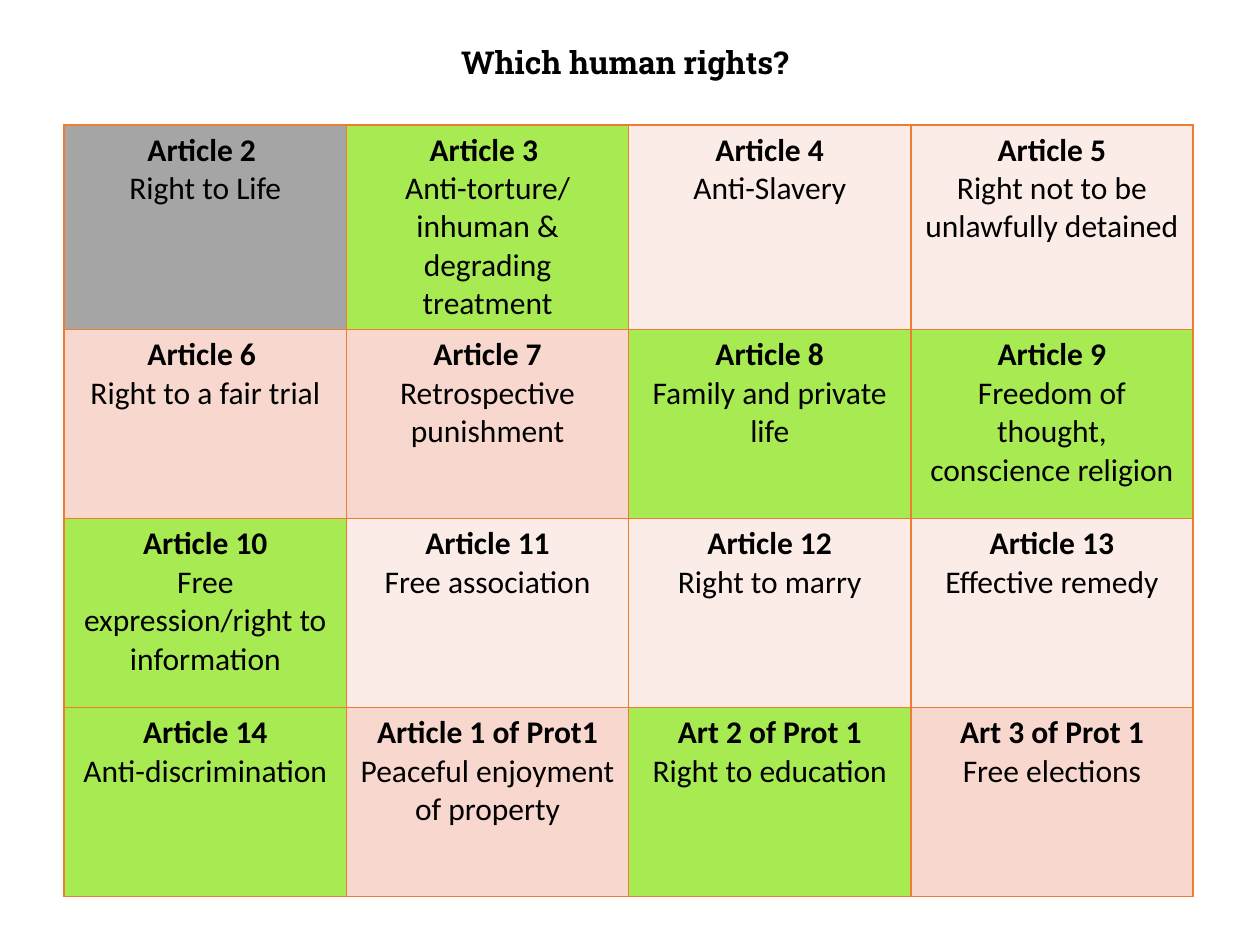
import pptx
import pptx.util
import pptx.dml.color
import pptx.enum.text
import lxml.etree
from pptx.oxml.ns import qn

TITLE = "Which human rights?"
# heading, right, colour of the cell
RIGHTS = [
    [("Article 2 ", "Right to Life", "grey"),
     ("Article 3 ", "Anti-torture/inhuman & degrading treatment", "green"),
     ("Article 4", "Anti-Slavery", "pale"),
     ("Article 5", "Right not to be unlawfully detained", "pale")],
    [("Article 6 ", "Right to a fair trial", "pink"),
     ("Article 7", "Retrospective punishment", "pink"),
     ("Article 8", "Family and private life", "green"),
     ("Article 9", "Freedom of thought, conscience religion", "green")],
    [("Article 10", "Free expression/right to information", "green"),
     ("Article 11", "Free association", "pale"),
     ("Article 12", "Right to marry", "pale"),
     ("Article 13", "Effective remedy", "pale")],
    [("Article 14", "Anti-discrimination", "green"),
     ("Article 1 of Prot1", "Peaceful enjoyment of property", "pink"),
     ("Art 2 of Prot 1", "Right to education", "green"),
     ("Art 3 of Prot 1", "Free elections", "pink")],
]
COLORS = {"text": "000000", "line": "ED7D31", "grey": "A5A5A5",
          "green": "A7EA52", "pale": "FCECE8", "pink": "F8D7CE"}
WIDE, HIGH = 10, 7.5
COL, ROW = 2.24, 1.5
LEFT, TOP = 0.51, 0.99

inch = pptx.util.Inches


def rgb(name):
    return pptx.dml.color.RGBColor.from_string(COLORS[name])


def write(para, text, font="Calibri", size=18, bold=False, color="text"):
    para.alignment = pptx.enum.text.PP_ALIGN.CENTER
    run = para.add_run()
    run.text = text
    run.font.name = font
    run.font.size = pptx.util.Pt(size)
    run.font.bold = bold
    run.font.color.rgb = rgb(color)


def border(cell, color="line", width=1):
    props = cell._tc.get_or_add_tcPr()
    for spot, side in enumerate(("lnL", "lnR", "lnT", "lnB")):
        line = lxml.etree.Element(qn("a:" + side), w=str(pptx.util.Pt(width)))
        fill = lxml.etree.SubElement(line, qn("a:solidFill"))
        lxml.etree.SubElement(fill, qn("a:srgbClr"), val=COLORS[color])
        props.insert(spot, line)


def main():
    deck = pptx.Presentation()
    deck.slide_width, deck.slide_height = inch(WIDE), inch(HIGH)
    slide = deck.slides.add_slide(deck.slide_layouts[6])

    rows, cols = len(RIGHTS), len(RIGHTS[0])
    table = slide.shapes.add_table(
        rows, cols, inch(LEFT), inch(TOP),
        inch(COL * cols), inch(ROW * rows)).table
    for col in table.columns:
        col.width = inch(COL)
    for row in table.rows:
        row.height = inch(ROW)
    for r, line in enumerate(RIGHTS):
        for c, (head, right, color) in enumerate(line):
            cell = table.cell(r, c)
            cell.fill.solid()
            cell.fill.fore_color.rgb = rgb(color)
            border(cell)
            write(cell.text_frame.paragraphs[0], head, bold=True)
            write(cell.text_frame.add_paragraph(), right)

    box = slide.shapes.add_textbox(inch(0.43), inch(0.29), inch(9.06), inch(0.5))
    box.text_frame.word_wrap = True
    write(box.text_frame.paragraphs[0], TITLE, font="Roboto Slab", bold=True)

    deck.save("out.pptx")


if __name__ == "__main__":
    main()
